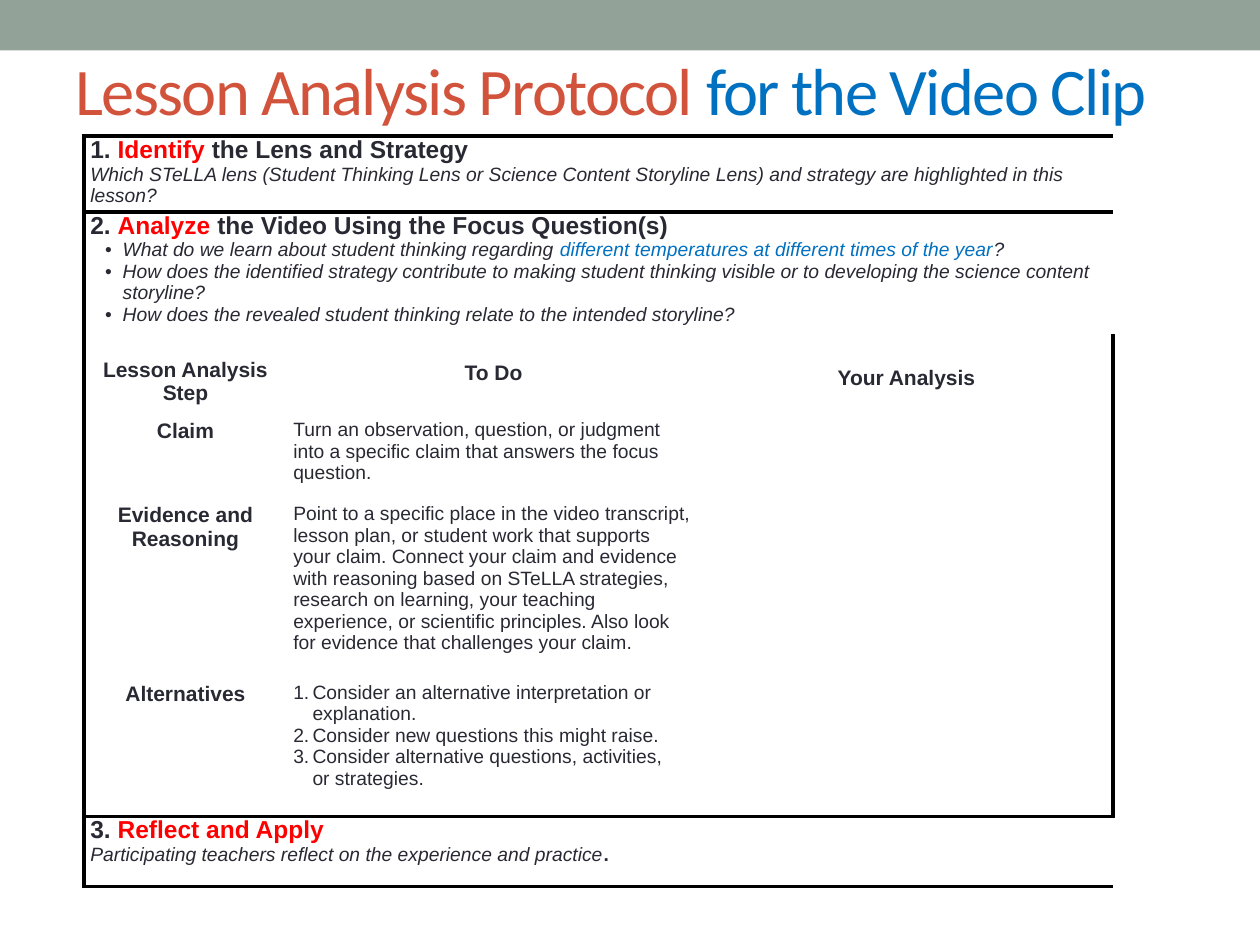
from dataclasses import dataclass

from lxml import etree
from pptx import Presentation
from pptx.dml.color import RGBColor
from pptx.enum.shapes import MSO_SHAPE
from pptx.enum.text import MSO_ANCHOR, PP_ALIGN
from pptx.oxml.ns import qn
from pptx.util import Pt

RECT = MSO_SHAPE.RECTANGLE
MIDDLE = MSO_ANCHOR.MIDDLE
LEFT, CENTER = PP_ALIGN.LEFT, PP_ALIGN.CENTER


@dataclass(frozen=True)
class Theme:
    bar: str = "93A299"
    title: str = "D2533C"
    blue: str = "0070C0"
    red: str = "FF0000"
    ink: str = "292934"
    rule: str = "000000"
    head_font: str = "Calibri"
    body_font: str = "Arial"
    title_size: float = 38
    step_size: float = 14
    label_size: float = 12
    body_size: float = 11
    rule_width: float = 2.25


T = Theme()

COLS = (116, 236, 236)
ROWS = (40, 67, 49, 48, 102, 77, 40)
FULL_ROWS = (0, 1, 6)          # rows that span all columns
TOP_RULES, LOW_RULES = (0, 1, 6), (0, 5, 6)

HEADS = (("Lesson Analysis Step", 13.8), ("To Do", 16), ("Your Analysis", 18.4))
STEPS = (
    ("Claim", ["Turn an observation, question, or judgment into a specific claim "
               "that answers the focus question."], None),
    ("Evidence and Reasoning",
     ["Point to a specific place in the video transcript, lesson plan, or student "
      "work that supports your claim. Connect your claim and evidence with reasoning "
      "based on STeLLA strategies, research on learning, your teaching experience, "
      "or scientific principles. Also look for evidence that challenges your claim."],
     None),
    ("Alternatives",
     ["Consider an alternative interpretation or explanation.",
      "Consider new questions this might raise.",
      "Consider alternative questions, activities, \nor strategies."], "number"),
)
FOCUS = (
    [("What do we learn about student thinking regarding ", {}),
     ("different temperatures at different times of the year", {"color": T.blue}),
     ("?", {})],
    "How does the identified strategy contribute to making student thinking visible "
    "or to developing the science content storyline?",
    "How does the revealed student thinking relate to the intended storyline?",
)


def mark(para, kind):
    """Give a paragraph a hanging bullet or number."""
    props = para._p.get_or_add_pPr()
    left, hang = (11, 11) if kind == "number" else (18.5, 10)
    props.set("marL", str(Pt(left)))
    props.set("indent", str(-Pt(hang)))
    if kind == "number":
        etree.SubElement(props, qn("a:buAutoNum"), type="arabicPeriod")
    else:
        etree.SubElement(props, qn("a:buFont"), typeface=T.body_font)
        etree.SubElement(props, qn("a:buChar"), char="•")


def write(frame, text, *, first=False, size=T.body_size, color=T.ink, bold=False,
          italic=False, font=T.body_font, align=LEFT, after=0, bullet=None, track=0):
    """Add one paragraph; text is a string or a list of (string, changes)."""
    para = frame.paragraphs[0] if first else frame.add_paragraph()
    if bullet:
        mark(para, bullet)
    para.alignment = align
    para.space_before = Pt(0)
    para.space_after = Pt(after)
    base = dict(size=size, color=color, bold=bold, italic=italic)
    for words, change in [(text, {})] if isinstance(text, str) else text:
        look = base | change
        for i, line in enumerate(words.split("\n")):
            if i:
                para.add_line_break()
            run = para.add_run()
            run.text = line
            run.font.name = font
            run.font.size = Pt(look["size"])
            run.font.bold = look["bold"]
            run.font.italic = look["italic"]
            run.font.color.rgb = RGBColor.from_string(look["color"])
            if track:
                run._r.get_or_add_rPr().set("spc", str(track * 100))


def add_bar(slide):
    bar = slide.shapes.add_shape(RECT, 0, 0, Pt(720), Pt(28.8))
    bar.shadow.inherit = False
    bar.fill.solid()
    bar.fill.fore_color.rgb = RGBColor.from_string(T.bar)
    bar.line.fill.background()


def add_title(slide):
    box = slide.shapes.add_textbox(Pt(36), Pt(6), Pt(666), Pt(90))
    frame = box.text_frame
    frame.word_wrap = True
    frame.vertical_anchor = MIDDLE
    write(frame, [("Lesson Analysis Protocol ", {}),
                  ("for the Video Clip", {"color": T.blue})],
          first=True, size=T.title_size, color=T.title, font=T.head_font, track=-1)


def set_rules(cell, sides):
    """Draw the named sides and clear the others."""
    props = cell._tc.get_or_add_tcPr()
    for side in "LRTB":
        line = etree.SubElement(props, qn(f"a:ln{side}"), w=str(Pt(T.rule_width)))
        if side in sides:
            fill = etree.SubElement(line, qn("a:solidFill"))
            etree.SubElement(fill, qn("a:srgbClr"), val=T.rule)
        else:
            etree.SubElement(line, qn("a:noFill"))


def add_grid(slide):
    table = slide.shapes.add_table(len(ROWS), len(COLS), Pt(48), Pt(77.8),
                                   Pt(sum(COLS)), Pt(sum(ROWS))).table
    table.first_row = table.horz_banding = False
    for c, width in enumerate(COLS):
        table.columns[c].width = Pt(width)
    for r, height in enumerate(ROWS):
        table.rows[r].height = Pt(height)
        for c in range(len(COLS)):
            cell = table.cell(r, c)
            cell.margin_left = cell.margin_right = Pt(3.6)
            cell.margin_top = cell.margin_bottom = 0
            sides = (("L" if c == 0 else "") + ("R" if c == len(COLS) - 1 else "")
                     + ("T" if r in TOP_RULES else "")
                     + ("B" if r in LOW_RULES else ""))
            set_rules(cell, sides)
            cell.fill.background()
    for r in FULL_ROWS:
        table.cell(r, 0).merge(table.cell(r, len(COLS) - 1))
    return table


def add_step(frame, number, key, rest=""):
    parts = [(f"{number}. ", {}), (key, {"color": T.red})]
    if rest:
        parts.append((rest, {}))
    write(frame, parts, first=True, size=T.step_size, bold=True)


def fill_grid(table):
    # Three numbered steps across the full width
    lens, video, apply = (table.cell(r, 0).text_frame for r in FULL_ROWS)
    add_step(lens, 1, "Identify", " the Lens and Strategy")
    write(lens, "Which STeLLA lens (Student Thinking Lens or Science Content Storyline "
          "Lens) and strategy are highlighted in this lesson?", italic=True, after=2)
    add_step(video, 2, "Analyze", " the Video Using the Focus Question(s)")
    for ask in FOCUS:
        write(video, ask, italic=True, bullet="dot")
    add_step(apply, 3, "Reflect and Apply")
    write(apply, [("Participating teachers reflect on the experience and practice", {}),
                  (".", {"italic": False, "bold": True})], italic=True)

    # Column heads, each lowered by its own margin
    label = dict(first=True, size=T.label_size, bold=True, align=CENTER)
    for c, (head, drop) in enumerate(HEADS):
        cell = table.cell(2, c)
        cell.margin_top = Pt(drop)
        write(cell.text_frame, head, **label)

    # Analysis steps
    for r, (name, tasks, kind) in enumerate(STEPS, start=3):
        write(table.cell(r, 0).text_frame, name, **label)
        for i, task in enumerate(tasks):
            write(table.cell(r, 1).text_frame, task, first=i == 0, bullet=kind)


def main():
    deck = Presentation()
    deck.slide_width, deck.slide_height = Pt(720), Pt(540)
    slide = deck.slides.add_slide(deck.slide_layouts[6])
    add_bar(slide)
    add_title(slide)
    fill_grid(add_grid(slide))
    deck.save("out.pptx")


if __name__ == "__main__":
    main()
